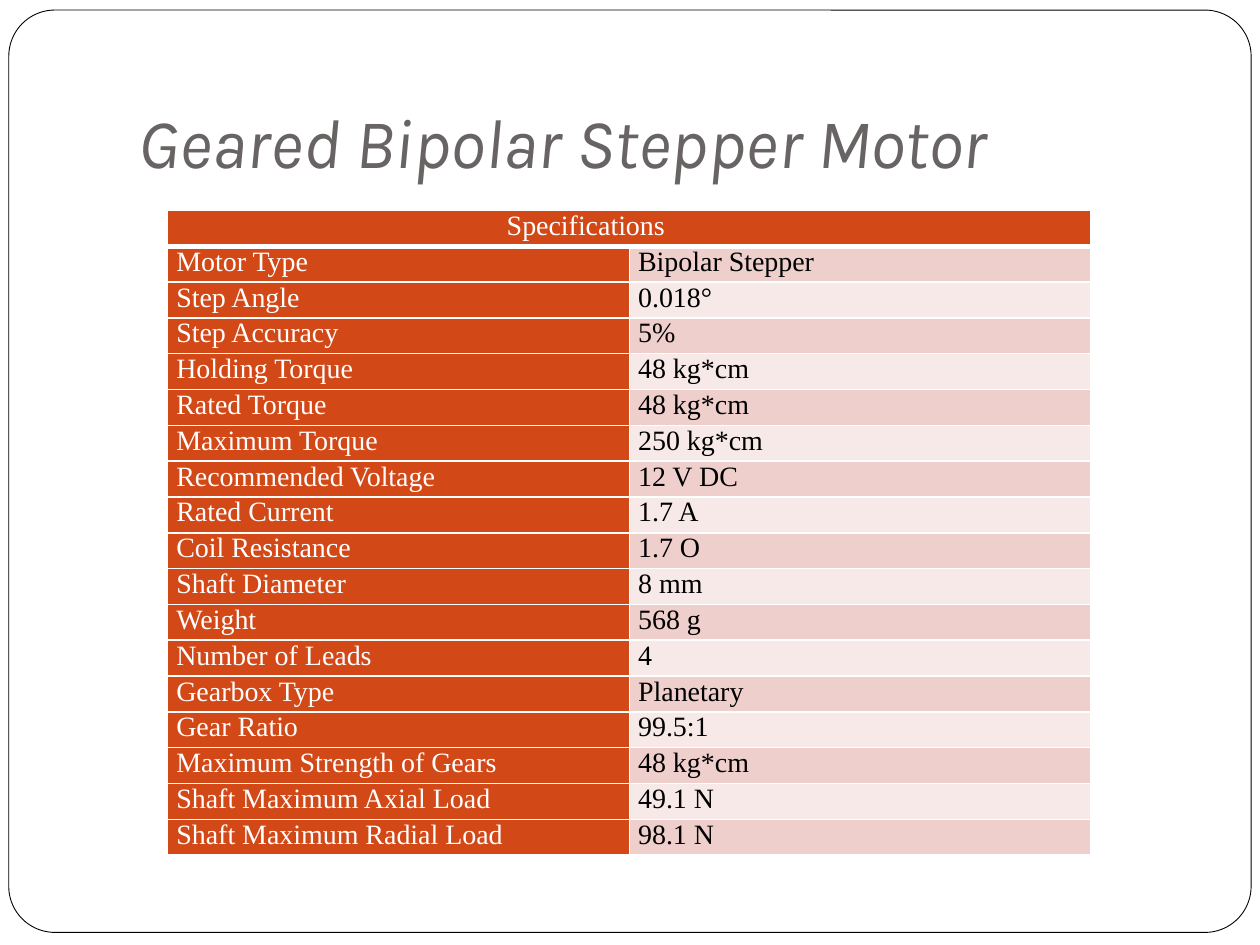
import pptx
import pptx.dml.color
import pptx.enum.shapes
import pptx.enum.text
import pptx.oxml
import pptx.oxml.ns
import pptx.util

Inches = pptx.util.Inches
Pt = pptx.util.Pt
Align = pptx.enum.text.PP_ALIGN
Anchor = pptx.enum.text.MSO_ANCHOR

COLORS = {
    "paper": "FFFFFF",
    "ink": "000000",
    "title": "696464",
    "label": "D34817",
    "band_dark": "EFCFCC",
    "band_light": "F7E9E8",
}
TITLE_FONT = {"name": "Karla", "size": Pt(40), "italic": True, "bold": False}
CELL_FONT = {"name": "Times New Roman", "size": Pt(16), "bold": False}
TITLE_FRAME = {
    "margin_left": Inches(0.1),
    "margin_right": Inches(0.1),
    "margin_top": Inches(0.05),
    "margin_bottom": Inches(0.1),
    "vertical_anchor": Anchor.BOTTOM,
    "word_wrap": True,
    "auto_size": pptx.enum.text.MSO_AUTO_SIZE.NONE,
}
CELL_FRAME = {
    "margin_left": Inches(0.07),
    "margin_right": Inches(0.07),
    "margin_top": 0,
    "margin_bottom": 0,
    "vertical_anchor": Anchor.TOP,
}
HEADING = "Specifications"
HEADING_TABS = [(1.22, "l"), (3.25, "ctr")]
SPECIFICATIONS = [
    ("Motor Type", "Bipolar Stepper"),
    ("Step Angle", "0.018°"),
    ("Step Accuracy", "5%"),
    ("Holding Torque", "48 kg*cm"),
    ("Rated Torque", "48 kg*cm"),
    ("Maximum Torque", "250 kg*cm"),
    ("Recommended Voltage", "12 V DC"),
    ("Rated Current", "1.7 A"),
    ("Coil Resistance", "1.7 O"),
    ("Shaft Diameter", "8 mm"),
    ("Weight", "568 g"),
    ("Number of Leads", "4"),
    ("Gearbox Type", "Planetary"),
    ("Gear Ratio", "99.5:1"),
    ("Maximum Strength of Gears", "48 kg*cm"),
    ("Shaft Maximum Axial Load", "49.1 N"),
    ("Shaft Maximum Radial Load", "98.1 N"),
]


def rgb(name):
    return pptx.dml.color.RGBColor.from_string(COLORS[name])


def apply(target, values):
    for name, value in values.items():
        setattr(target, name, value)


def write(para, text, font, color):
    span = para.add_run()
    span.text = text
    apply(span.font, font)
    span.font.color.rgb = rgb(color)


def add_frame(page, box):
    frame = page.shapes.add_shape(
        pptx.enum.shapes.MSO_SHAPE.ROUNDED_RECTANGLE, *map(Inches, box))
    frame.adjustments[0] = 0.05
    frame.shadow.inherit = False
    frame.fill.solid()
    frame.fill.fore_color.rgb = rgb("paper")
    frame.line.color.rgb = rgb("ink")
    frame.line.width = Pt(0.5)
    page.shapes.element.insert(2, frame.element)


def add_title(page, box, text):
    title = page.shapes.title
    apply(title, dict(zip(("left", "top", "width", "height"), map(Inches, box))))
    apply(title.text_frame, TITLE_FRAME)
    para = title.text_frame.paragraphs[0]
    para.alignment = Align.LEFT
    write(para, text, TITLE_FONT, "title")


def add_borders(cell, bottom):
    widths = {"lnL": 1, "lnR": 1, "lnT": 1, "lnB": bottom}
    properties = cell._tc.get_or_add_tcPr()
    for side, width in widths.items():
        properties.append(pptx.oxml.parse_xml(
            f'<a:{side} {pptx.oxml.ns.nsdecls("a")} w="{Pt(width)}"><a:solidFill>'
            f'<a:srgbClr val="{COLORS["paper"]}"/></a:solidFill></a:{side}>'))


def fill_cell(cell, text, fill, color, alignment=Align.JUSTIFY, bottom=1):
    apply(cell, CELL_FRAME)
    add_borders(cell, bottom)
    cell.fill.solid()
    cell.fill.fore_color.rgb = rgb(fill)
    para = cell.text_frame.paragraphs[0]
    para.alignment = alignment
    write(para, text, CELL_FONT, color)


def set_tabs(para, stops):
    tabs = "".join(f'<a:tab pos="{Inches(at)}" algn="{kind}"/>' for at, kind in stops)
    para._p.get_or_add_pPr().append(pptx.oxml.parse_xml(
        f'<a:tabLst {pptx.oxml.ns.nsdecls("a")}>{tabs}</a:tabLst>'))


def add_specifications(page, box):
    count = len(SPECIFICATIONS) + 1
    left, top, width, height = map(Inches, box)
    table = page.shapes.add_table(count, 2, left, top, width, height).table
    apply(table, {"first_row": False, "horz_banding": False})
    for column in table.columns:
        column.width = width // 2
    for row in table.rows:
        row.height = height // count

    heading = table.cell(0, 0)
    heading.merge(table.cell(0, 1))
    fill_cell(heading, "\t" * len(HEADING_TABS) + HEADING, "label", "paper",
              Align.LEFT, bottom=3)
    set_tabs(heading.text_frame.paragraphs[0], HEADING_TABS)

    for index, (label, value) in enumerate(SPECIFICATIONS, 1):
        band = "band_dark" if index % 2 else "band_light"
        fill_cell(table.cell(index, 0), label, "label", "paper")
        fill_cell(table.cell(index, 1), value, band, "ink")


def main():
    deck = pptx.Presentation()
    deck.slide_width, deck.slide_height = Inches(10), Inches(7.5)
    page = deck.slides.add_slide(deck.slide_layouts.get_by_name("Title Only"))
    add_frame(page, (0.07, 0.08, 9.86, 7.32))
    add_title(page, (1, 0.3, 8.5, 1.25), "Geared Bipolar Stepper Motor")
    add_specifications(page, (1.33, 1.67, 7.33, 5.12))
    deck.save("out.pptx")


if __name__ == "__main__":
    main()
